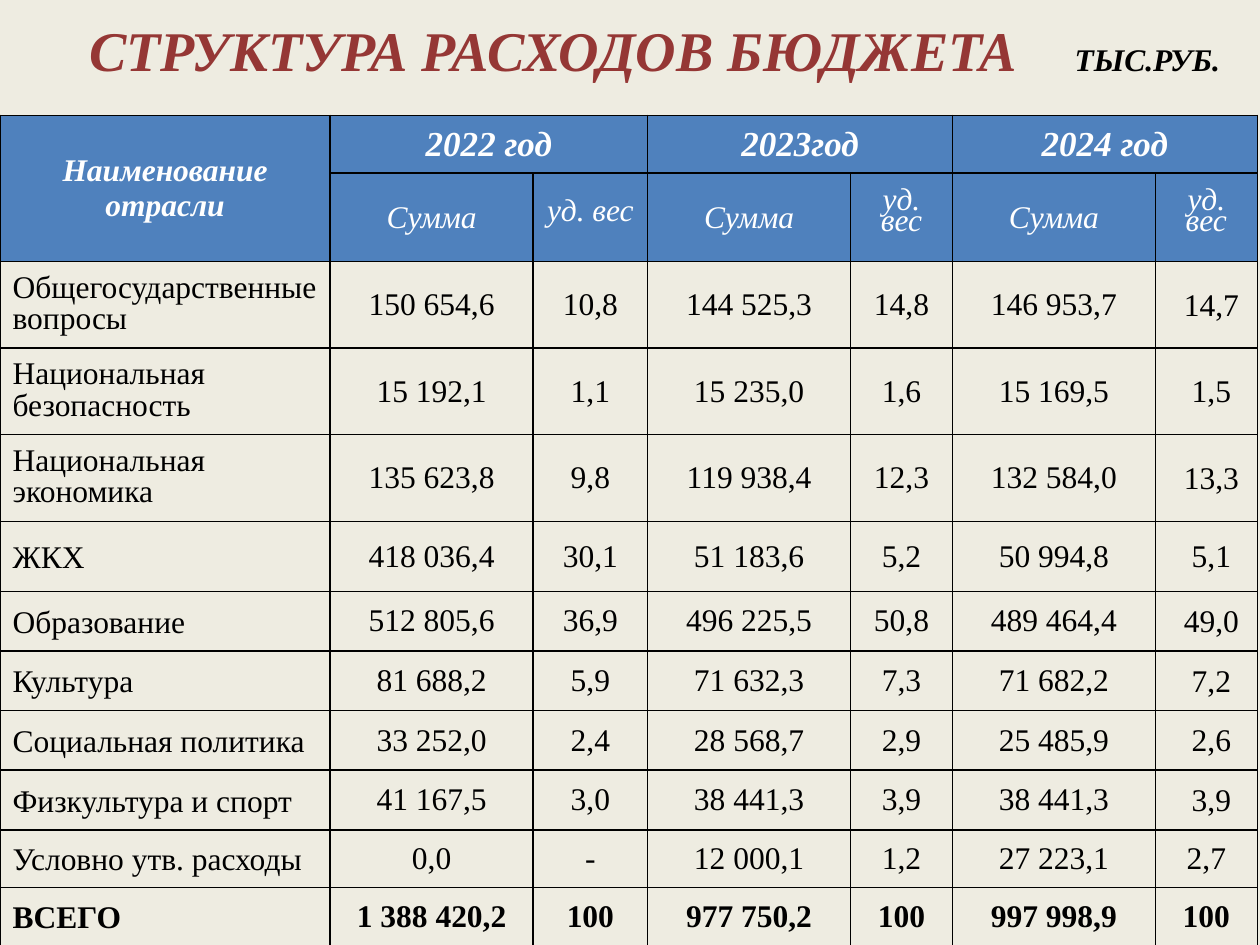
from lxml import etree
from pptx import Presentation
from pptx.dml.color import RGBColor
from pptx.enum import text
from pptx.oxml import ns
from pptx.util import Pt

FONT = "Times New Roman"
CREAM = RGBColor(0xEE, 0xEC, 0xE1)
BLUE = RGBColor(0x4F, 0x81, 0xBD)
MAROON = RGBColor(0x95, 0x37, 0x35)
WHITE = RGBColor(0xFF, 0xFF, 0xFF)
BLACK = RGBColor(0, 0, 0)

COLUMN_WIDTHS = [188.7, 116, 65.4, 116, 58.2, 116, 58.2]
ROW_HEIGHTS = [33, 36] + [49.5] * 3 + [40] + [34.1] * 4 + [33.1] * 2
YEARS = ["2022 год", "2023год", "2024 год"]
EXPENSES = [
    ["Общегосударственные вопросы", "150 654,6", "10,8", "144 525,3", "14,8", "146 953,7", "14,7"],
    ["Национальная безопасность", "15 192,1", "1,1", "15 235,0", "1,6", "15 169,5", "1,5"],
    ["Национальная экономика", "135 623,8", "9,8", "119 938,4", "12,3", "132 584,0", "13,3"],
    ["ЖКХ", "418 036,4", "30,1", "51 183,6", "5,2", "50 994,8", "5,1"],
    ["Образование", "512 805,6", "36,9", "496 225,5", "50,8", "489 464,4", "49,0"],
    ["Культура", "81 688,2", "5,9", "71 632,3", "7,3", "71 682,2", "7,2"],
    ["Социальная политика", "33 252,0", "2,4", "28 568,7", "2,9", "25 485,9", "2,6"],
    ["Физкультура и спорт", "41 167,5", "3,0", "38 441,3", "3,9", "38 441,3", "3,9"],
    ["Условно утв. расходы", "0,0", "-", "12 000,1", "1,2", "27 223,1", "2,7"],
    ["ВСЕГО", "1 388 420,2", "100", "977 750,2", "100", "997 998,9", "100"],
]


def add_span(para, words, size, color, bold=False, italic=False):
    span = para.add_run()
    span.text = words
    font = span.font
    font.name, font.size, font.bold, font.italic = FONT, Pt(size), bold, italic
    font.color.rgb = color


def add_borders(cell):
    properties = cell._tc.get_or_add_tcPr()
    for index, side in enumerate(("lnL", "lnR", "lnT", "lnB")):
        line = etree.Element(ns.qn(f"a:{side}"), w=str(Pt(1)))
        fill = etree.SubElement(line, ns.qn("a:solidFill"))
        etree.SubElement(fill, ns.qn("a:srgbClr"), val=str(BLACK))
        properties.insert(index, line)


def fill_cell(cell, words, size, color, bold=False, italic=False, centered=True, spacing=None):
    cell.vertical_anchor = text.MSO_ANCHOR.MIDDLE
    para = cell.text_frame.paragraphs[0]
    para.alignment = text.PP_ALIGN.CENTER if centered else text.PP_ALIGN.LEFT
    if spacing:
        para.line_spacing = Pt(spacing)
    add_span(para, words, size, color, bold, italic)


def add_title(page, left, top, width, height):
    box = page.shapes.add_textbox(Pt(left), Pt(top), Pt(width), Pt(height))
    frame = box.text_frame
    frame.word_wrap = True
    frame.vertical_anchor = text.MSO_ANCHOR.MIDDLE
    para = frame.paragraphs[0]
    tabs = etree.SubElement(para._p.get_or_add_pPr(), ns.qn("a:tabLst"))
    etree.SubElement(tabs, ns.qn("a:tab"), pos=str(Pt(563)), algn="l")
    add_span(para, "СТРУКТУРА РАСХОДОВ БЮДЖЕТА\t", 32, MAROON, True, True)
    add_span(para, "ТЫС.РУБ.", 18, BLACK, True, True)


def fill_header(table):
    table.cell(0, 0).merge(table.cell(1, 0))
    fill_cell(table.cell(0, 0), "Наименование отрасли", 18, WHITE, True, True)
    for index, year in enumerate(YEARS):
        column = 1 + 2 * index
        table.cell(0, column).merge(table.cell(0, column + 1))
        fill_cell(table.cell(0, column), year, 20, WHITE, True, True)
        fill_cell(table.cell(1, column), "Сумма", 18, WHITE, italic=True)
        fill_cell(table.cell(1, column + 1), "уд. вес", 18, WHITE, italic=True, spacing=12)


def fill_expenses(table):
    for row, (name, *values) in enumerate(EXPENSES, start=2):
        bold = name == "ВСЕГО"
        spacing = 18 if row < 5 else 21.6
        fill_cell(table.cell(row, 0), name, 18, BLACK, bold, centered=False, spacing=spacing)
        for column, value in enumerate(values, start=1):
            fill_cell(table.cell(row, column), value, 18, BLACK, bold)
        if row < 10:
            share = table.cell(row, 6)
            share.margin_left, share.margin_right = Pt(6.5), Pt(0.7)
            share.margin_top, share.margin_bottom = Pt(0.7), Pt(0)


def add_budget_table(page, left, top, width, height):
    frame = page.shapes.add_table(
        len(ROW_HEIGHTS), len(COLUMN_WIDTHS), Pt(left), Pt(top), Pt(width), Pt(height)
    )
    table = frame.table
    table.horz_banding = False
    for column, size in zip(table.columns, COLUMN_WIDTHS):
        column.width = Pt(size)
    for index, (row, size) in enumerate(zip(table.rows, ROW_HEIGHTS)):
        row.height = Pt(size)
        for cell in row.cells:
            if index < 2:
                cell.fill.solid()
                cell.fill.fore_color.rgb = BLUE
            else:
                cell.fill.background()
            add_borders(cell)
    fill_header(table)
    fill_expenses(table)


def main():
    deck = Presentation()
    deck.slide_width, deck.slide_height = Pt(720), Pt(540)
    page = deck.slides.add_slide(deck.slide_layouts[6])
    page.background.fill.solid()
    page.background.fill.fore_color.rgb = CREAM
    add_title(page, 44, 7.2, 667, 41.8)
    add_budget_table(page, 0, 66, sum(COLUMN_WIDTHS), sum(ROW_HEIGHTS))
    deck.save("out.pptx")


if __name__ == "__main__":
    main()
